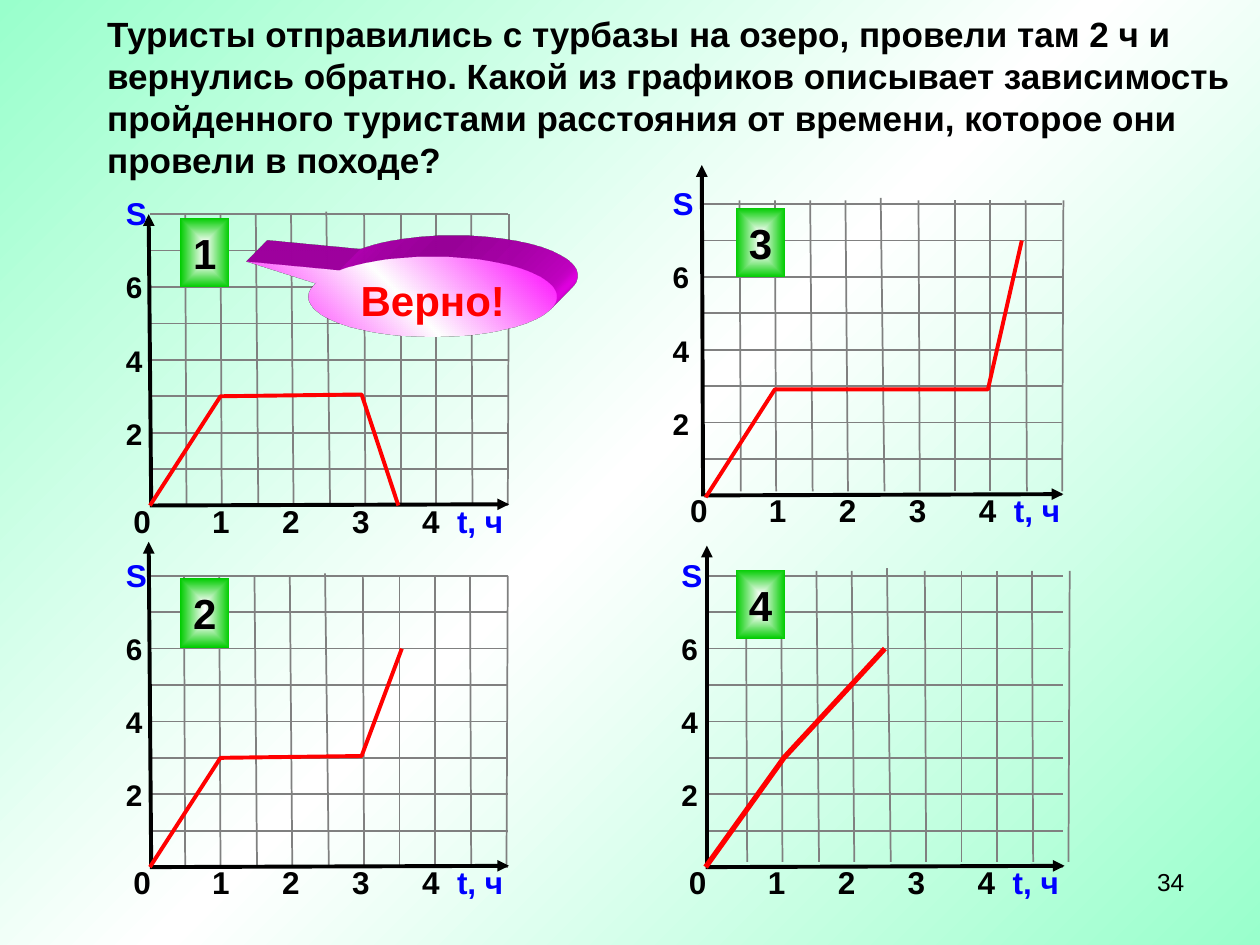
"""Build the quiz slide that asks which of four graphs describes a hike."""
from dataclasses import dataclass
from typing import NamedTuple

import lxml.etree
import pptx
import pptx.dml.color
import pptx.enum.shapes
import pptx.enum.text
import pptx.oxml
import pptx.oxml.ns
import pptx.slide
import pptx.util

Inches = pptx.util.Inches
Align = pptx.enum.text.PP_ALIGN
Anchor = pptx.enum.text.MSO_ANCHOR
Shapes = pptx.enum.shapes.MSO_SHAPE


@dataclass(frozen=True)
class Theme:
    font: str = "Arial"
    ink: str = "000000"
    axis_name: str = "0000FF"
    grid: str = "808080"
    curve: str = "FF0000"
    mint: str = "99FFCC"
    white: str = "FFFFFF"
    badge: str = "00CC00"
    callout: str = "FF00FF"
    title_size: int = 20
    label_size: int = 18
    scale_size: int = 17
    badge_size: int = 24
    number_size: int = 14


class Point(NamedTuple):
    x: float
    y: float


class GridColumn(NamedTuple):
    offset: float
    lean: float = 0.01
    rise: float = 0


@dataclass(frozen=True)
class Graph:
    number: str
    grid: Point
    columns: Point
    axis_foot: Point
    axis_tip: Point
    scale_left: float
    times_left: float
    badge: Point
    curve: tuple[Point, ...]
    curve_width: float = 2.25


THEME = Theme()
ROW, ROWS, HOUR = 0.289, 8, 0.56
GRID_WIDTH, AXIS_LENGTH, COLUMN_HEIGHT = 2.84, 2.85, 2.31
COLUMNS = (
    GridColumn(0), GridColumn(0.28), GridColumn(0.56, 0.02), GridColumn(0.84, 0.02),
    GridColumn(1.12, 0.03, 0.02), GridColumn(1.42), GridColumn(1.71, 0),
    GridColumn(1.99, 0), GridColumn(2.27), GridColumn(2.57, -0.01),
)
GRAPHS = (
    Graph("1", Point(1.19, 1.7), Point(1.47, 1.7), Point(1.2, 4), Point(1.18, 1.7),
          0.9, 0.96, Point(1.43, 1.73),
          (Point(0, 0), Point(1, 3), Point(3, 3.05), Point(3.52, 0))),
    Graph("2", Point(1.19, 4.57), Point(1.46, 4.57), Point(1.2, 6.87), Point(1.18, 4.3),
          0.9, 0.96, Point(1.43, 4.59),
          (Point(0, 0), Point(1, 3), Point(3, 3.05), Point(3.57, 6))),
    Graph("3", Point(5.59, 1.62), Point(5.87, 1.59), Point(5.58, 3.94), Point(5.57, 1.31),
          5.24, 5.38, Point(5.84, 1.65),
          (Point(0.02, -0.05), Point(1, 2.91), Point(4.02, 2.91), Point(4.5, 7))),
    Graph("4", Point(5.6, 4.57), Point(5.92, 4.53), Point(5.61, 6.87), Point(5.61, 4.33),
          5.31, 5.37, Point(5.84, 4.52),
          (Point(0, 0), Point(1.11, 3), Point(2.54, 6)), 3),
)
QUESTION = (
    "Туристы отправились с турбазы на озеро, провели там 2 ч и",
    "вернулись обратно. Какой из графиков описывает зависимость",
    "пройденного туристами расстояния от времени, которое они",
    "провели в походе?",
)
LINEAR = '<a:lin ang="{}" scaled="1"/>'
CENTRED = '<a:path path="rect"><a:fillToRect l="50000" t="50000" r="50000" b="50000"/></a:path>'


def xml(tag: str, content: str = "", attributes: str = "") -> lxml.etree._Element:
    """Return a DrawingML element."""
    namespace = pptx.oxml.ns.nsdecls("a")
    return pptx.oxml.parse_xml(f"<a:{tag} {namespace} {attributes}>{content}</a:{tag}>")


def rgb(value: str) -> pptx.dml.color.RGBColor:
    """Return a colour object for a hex value."""
    return pptx.dml.color.RGBColor.from_string(value)


def set_gradient(fill, element, colors: tuple[str, ...], direction: str) -> None:
    """Give the fill evenly spaced colour stops in the stated direction."""
    fill.gradient()
    stops = "".join(
        f'<a:gs pos="{100000 * index // (len(colors) - 1)}"><a:srgbClr val="{color}"/></a:gs>'
        for index, color in enumerate(colors))
    old = next(element.iter(pptx.oxml.ns.qn("a:gradFill")))
    old.getparent().replace(old, xml("gradFill", f"<a:gsLst>{stops}</a:gsLst>{direction}"))


def format_paragraph(paragraph, size: float, color: str = THEME.ink, bold: bool = True,
                     align=Align.LEFT) -> None:
    """Format every run of the paragraph alike."""
    paragraph.alignment = align
    for run in paragraph.runs:
        run.font.name, run.font.size, run.font.bold = THEME.font, pptx.util.Pt(size), bold
        run.font.color.rgb = rgb(color)


def add_text(slide: pptx.slide.Slide, place: Point, width: float, height: float, text: str):
    """Add a text box and return its text frame."""
    frame = slide.shapes.add_textbox(*map(Inches, (*place, width, height))).text_frame
    frame.word_wrap, frame.margin_right = True, 0
    frame.text = text
    return frame


def add_line(slide: pptx.slide.Slide, start: Point, end: Point, color: str = THEME.grid,
             width: float = 1, arrow: bool = False) -> None:
    """Draw a straight line, with an arrowhead at its end if asked."""
    line = slide.shapes.add_connector(
        pptx.enum.shapes.MSO_CONNECTOR.STRAIGHT, *map(Inches, (*start, *end)))
    line.line.color.rgb, line.line.width = rgb(color), pptx.util.Pt(width)
    if arrow:
        line.line._get_or_add_ln().append(xml("tailEnd", attributes='type="triangle"'))
    line._element.spPr.append(xml("effectLst"))


def add_filled_shape(slide: pptx.slide.Slide, kind, place: Point, width: float, height: float,
                     colors: tuple[str, ...], direction: str, text: str, color: str):
    """Add a gradient shape without outline that holds a centred word."""
    shape = slide.shapes.add_shape(kind, *map(Inches, (*place, width, height)))
    set_gradient(shape.fill, shape._element.spPr, colors, direction)
    shape.line.fill.background()
    shape.shadow.inherit = False
    shape.text_frame.text = text
    shape.text_frame.word_wrap = False
    format_paragraph(shape.text_frame.paragraphs[0], THEME.badge_size, color, align=Align.CENTER)
    return shape


def add_labels(slide: pptx.slide.Slide, graph: Graph, bottom: float) -> None:
    """Write the distance scale and the time scale of a graph."""
    scale = add_text(slide, Point(graph.scale_left, graph.grid.y - 0.21), 0.37, 2.38, "S\n6\n4\n2")
    format_paragraph(scale.paragraphs[0], THEME.label_size, THEME.axis_name)
    for paragraph in scale.paragraphs[1:]:
        format_paragraph(paragraph, THEME.scale_size)
        paragraph.space_before = pptx.util.Pt(21.4)
    times = add_text(slide, Point(graph.times_left, bottom - 0.08), 3.14, 0.4, "0\t1\t2\t3\t4\t")
    paragraph = times.paragraphs[0]
    format_paragraph(paragraph, THEME.label_size)
    unit = paragraph.add_run()
    unit.text = "t, ч"
    format_paragraph(paragraph, THEME.label_size)
    unit.font.color.rgb = rgb(THEME.axis_name)
    stops = [45 + 40 * hour for hour in range(4)] + [185]
    tabs = "".join(f'<a:tab pos="{pptx.util.Pt(stop)}" algn="l"/>' for stop in stops)
    paragraph._p.get_or_add_pPr().append(xml("tabLst", tabs))


def add_graph(slide: pptx.slide.Slide, graph: Graph) -> None:
    """Draw the grid, axes, labels, curve and badge of a graph."""
    left, top = graph.grid
    bottom = top + ROWS * ROW
    for row in range(ROWS + 1):
        y = top + row * ROW
        add_line(slide, Point(left, y), Point(left + GRID_WIDTH, y))
    for column in COLUMNS:
        x, y = graph.columns.x + column.offset, graph.columns.y
        add_line(slide, Point(x, y - column.rise), Point(x + column.lean, y + COLUMN_HEIGHT))
    add_line(slide, Point(left, bottom), Point(left + AXIS_LENGTH, bottom - 0.01),
             THEME.ink, 2.25, True)
    add_line(slide, graph.axis_foot, graph.axis_tip, THEME.ink, 2.25, True)
    add_labels(slide, graph, bottom)
    points = [(Inches(left + p.x * HOUR), Inches(bottom - p.y * ROW)) for p in graph.curve]
    builder = slide.shapes.build_freeform(*points[0])
    builder.add_line_segments(points[1:], close=False)
    curve = builder.convert_to_shape()
    curve.fill.background()
    curve.line.color.rgb, curve.line.width = rgb(THEME.curve), pptx.util.Pt(graph.curve_width)
    curve.shadow.inherit = False
    add_filled_shape(slide, Shapes.ACTION_BUTTON_CUSTOM, graph.badge, 0.39, 0.55,
                     (THEME.white, THEME.badge), CENTRED, graph.number, THEME.ink)


def add_callout(slide: pptx.slide.Slide) -> None:
    """Add the extruded callout that marks the right answer."""
    colors = (THEME.callout, THEME.white, THEME.callout)
    callout = add_filled_shape(slide, Shapes.OVAL_CALLOUT, Point(2.45, 2.04), 1.97, 0.63, colors,
                               LINEAR.format(315 * 60000), "Верно!", THEME.curve)
    callout.adjustments[0], callout.adjustments[1] = -0.75, -0.44
    callout.text_frame.vertical_anchor = Anchor.TOP
    properties = callout._element.spPr
    properties.append(xml("scene3d", '<a:camera prst="legacyObliqueTopRight"/>'
                                     '<a:lightRig rig="legacyFlat3" dir="b"/>'))
    properties.append(xml("sp3d", f'<a:extrusionClr><a:srgbClr val="{THEME.callout}"/>'
                          '</a:extrusionClr>', 'extrusionH="430200" prstMaterial="legacyMatrix"'))


def main() -> None:
    """Build and save the presentation."""
    presentation = pptx.Presentation()
    presentation.slide_width, presentation.slide_height = Inches(10), Inches(7.5)
    slide = presentation.slides.add_slide(presentation.slide_layouts[5])
    set_gradient(slide.background.fill, slide._element, (THEME.mint, THEME.white, THEME.mint),
                 LINEAR.format(45 * 60000))
    title = slide.shapes.title
    title.left, title.top, title.width, title.height = map(Inches, (0.75, 0.05, 9.2, 1.43))
    title.text_frame.text = "\n".join(QUESTION)
    title.text_frame.vertical_anchor = Anchor.TOP
    title.text_frame.auto_size = pptx.enum.text.MSO_AUTO_SIZE.NONE
    for paragraph in title.text_frame.paragraphs:
        format_paragraph(paragraph, THEME.title_size)
    for graph in GRAPHS:
        add_graph(slide, graph)
    add_callout(slide)
    number = add_text(slide, Point(7.17, 6.83), 2.23, 0.52, "34")
    format_paragraph(number.paragraphs[0], THEME.number_size, bold=False, align=Align.RIGHT)
    presentation.save("out.pptx")


if __name__ == "__main__":
    main()
